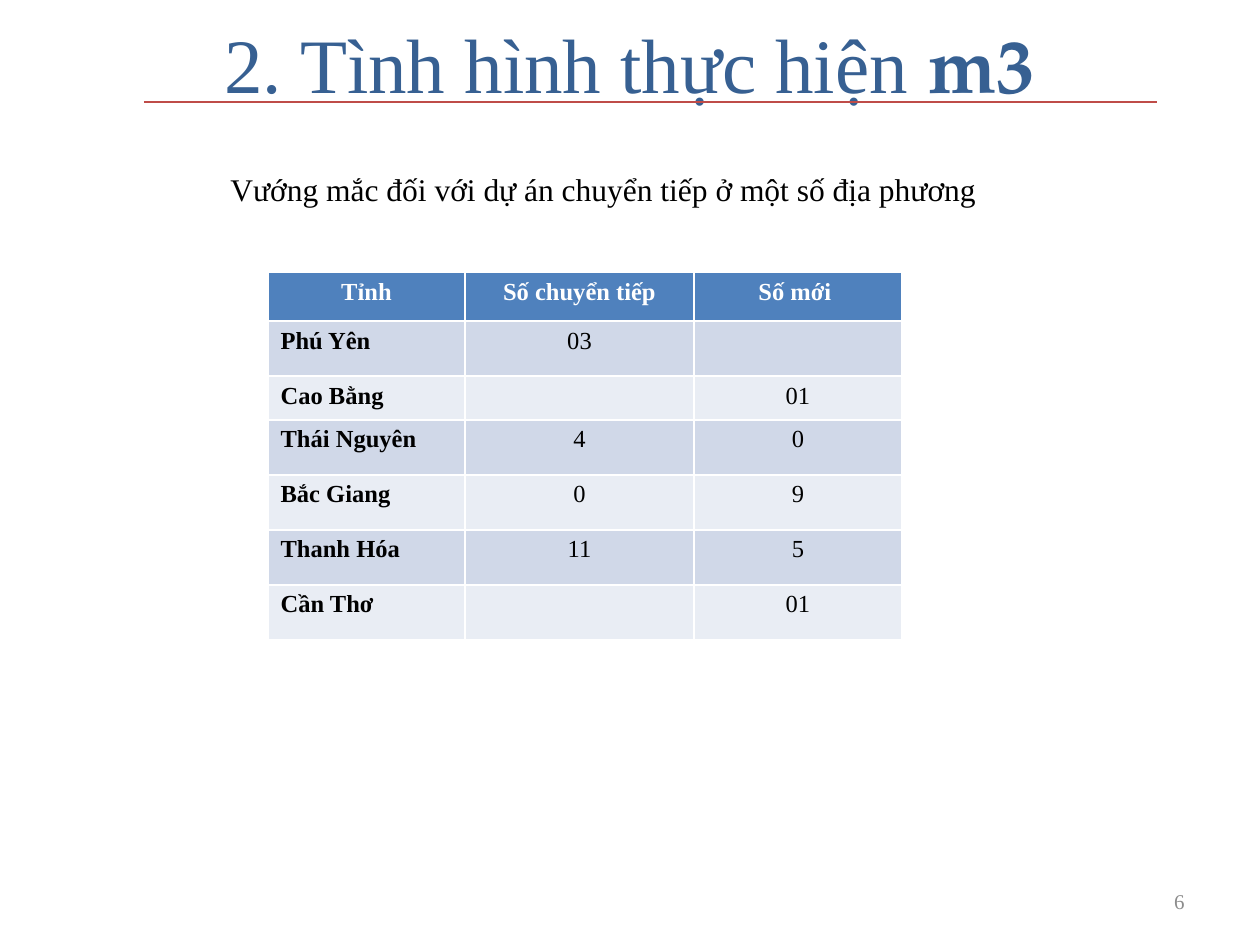
from pptx import Presentation
from pptx.dml.color import RGBColor
from pptx.enum.shapes import MSO_CONNECTOR as Conn
from pptx.enum.text import MSO_ANCHOR as Anchor, PP_ALIGN as Align
from pptx.oxml.ns import qn
from pptx.util import Pt
from lxml import etree

SCALE = 914400 / 126  # EMU per px


def px(*vals):
    return [round(v * SCALE) for v in vals]


def rgb(text):
    return RGBColor.from_string(text)


class Deck:
    face = "Times New Roman"
    blue, red, grey = "376092", "BF4C48", "8C8C8C"
    head, bands = "4F81BD", ("D0D8E8", "E9EDF4")

    def __init__(self, wide, high):
        self.prs = Presentation()
        self.prs.slide_width, self.prs.slide_height = px(wide, high)
        self.slide = self.prs.slides.add_slide(self.prs.slide_layouts[5])

    def style(self, font, size, color, bold=False, face=None):
        font.name, font.size, font.bold = face or self.face, Pt(size), bold
        font.color.rgb = rgb(color)

    def title(self, box, runs):
        hold = self.slide.shapes.title
        hold.left, hold.top, hold.width, hold.height = px(*box)
        hold.text_frame.vertical_anchor = Anchor.MIDDLE
        para = hold.text_frame.paragraphs[0]
        para.alignment = Align.CENTER
        for text, bold, face in runs:
            run = para.add_run()
            run.text = text
            self.style(run.font, 44, self.blue, bold, face)

    def rule(self, x1, x2, y):
        line = self.slide.shapes.add_connector(Conn.STRAIGHT, *px(x1, y, x2, y))
        line.line.color.rgb = rgb(self.red)
        line.line.width = Pt(0.75)
        etree.SubElement(line._element.spPr, qn("a:effectLst"))

    def text(self, box, text, size, color, align, anchor=Anchor.TOP):
        frame = self.slide.shapes.add_textbox(*px(*box)).text_frame
        frame.word_wrap, frame.vertical_anchor = True, anchor
        para = frame.paragraphs[0]
        para.text, para.alignment = text, align
        self.style(para.font, size, color)

    def cell(self, cell, text, fill, color, bold, align):
        cell.fill.solid()
        cell.fill.fore_color.rgb = rgb(fill)
        para = cell.text_frame.paragraphs[0]
        para.alignment = align
        if text:
            para.text = text
            self.style(para.font, 14, color, bold)
        else:  # keeps an empty cell from growing its row
            para._p.get_or_add_endParaRPr().set("sz", "1400")

    def table(self, x, y, cols, highs, data):
        box = px(x, y, sum(cols), sum(highs))
        grid = self.slide.shapes.add_table(len(highs), len(cols), *box).table
        for col, wide in zip(grid.columns, px(*cols)):
            col.width = wide
        for row, high in zip(grid.rows, px(*highs)):
            row.height = high
        for r, row in enumerate(data):
            fill = self.bands[(r - 1) % 2] if r else self.head
            color = "000000" if r else "FFFFFF"
            for c, text in enumerate(row):
                name = r > 0 and c == 0
                align = Align.LEFT if name else Align.CENTER
                self.cell(grid.cell(r, c), text, fill, color, name or r == 0, align)


def main():
    deck = Deck(1260, 945)

    # Heading and its rule
    deck.rule(144, 1157, 102)
    deck.title((63, 0, 1134, 125), [
        ("2. Tình hình thực hiện ", False, None),
        ("m3", True, "TeX Gyre Pagella"),
    ])

    # Lead line
    deck.text((157, 164, 893, 50),
              "Vướng mắc đối với dự án chuyển tiếp ở một số địa phương",
              18, "000000", Align.CENTER)

    # Projects by province
    deck.table(268, 272, (197, 229, 208), (49, 55, 44, 55, 55, 55, 55), [
        ("Tỉnh", "Số chuyển tiếp", "Số mới "),
        ("Phú Yên", "03", ""),
        ("Cao Bằng", "", "01"),
        ("Thái Nguyên", "4", "0"),
        ("Bắc Giang", "0", "9"),
        ("Thanh Hóa", "11", "5"),
        ("Cần Thơ", "", "01"),
    ])

    # Page number
    deck.text((903, 876, 294, 50), "6", 12, deck.grey, Align.RIGHT, Anchor.MIDDLE)

    deck.prs.save("out.pptx")


if __name__ == "__main__":
    main()
